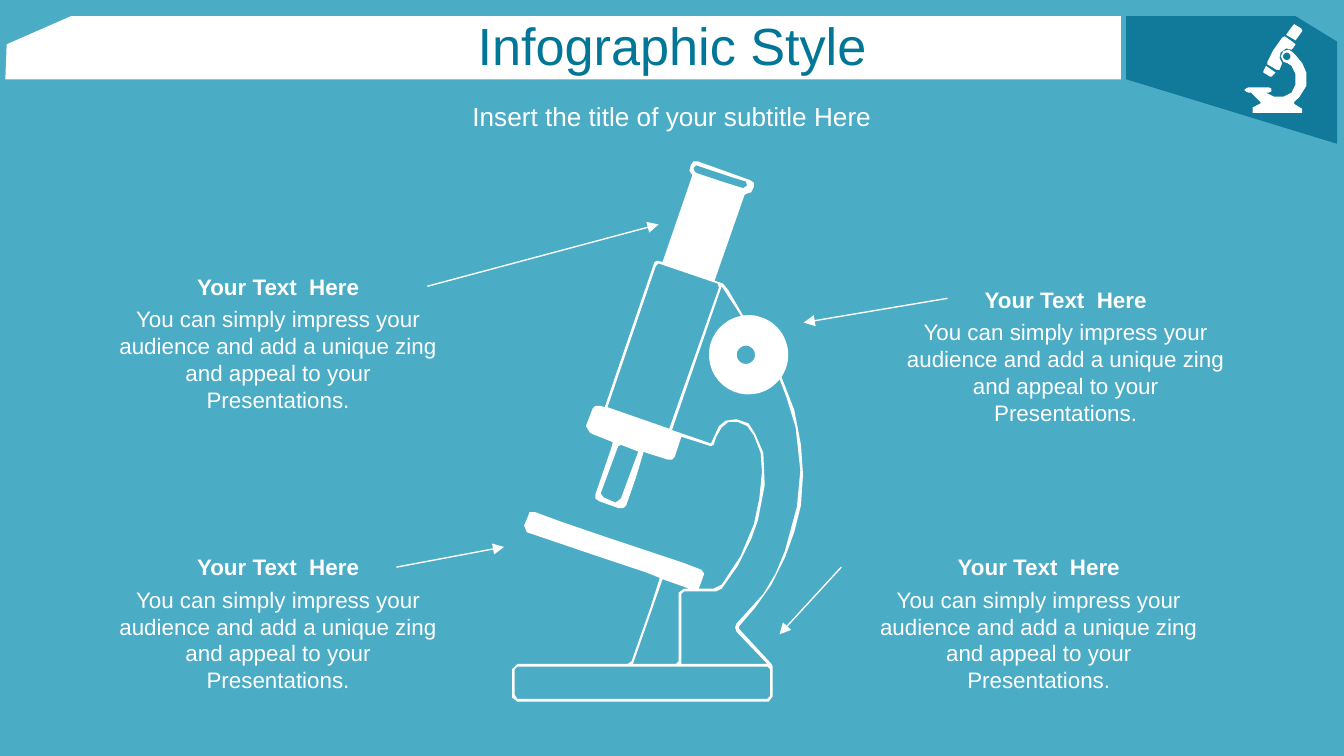
import math

import pptx
import pptx.dml.color
import pptx.enum.shapes
import pptx.enum.text
import pptx.oxml.ns
import pptx.util
from lxml import etree
from pptx.util import Inches

WHITE, SKY, TEAL, TITLE = "FFFFFF", "4BACC6", "117A9A", "027696"
STEPS = 10  # freeform units in a hundredth of an inch
HEADING = "Your Text  Here"
BODY = ("You can simply impress your audience and add a unique zing "
        "and appeal to your Presentations.")


def colour(value):
    return pptx.dml.color.RGBColor.from_string(value)


def arc(center_x, center_y, radius, start, end):
    """Points along a circle, angles in degrees, clockwise from the right."""
    count = 24
    angles = [math.radians(start + (end - start) * i / count) for i in range(count + 1)]
    return [(center_x + radius * math.cos(a), center_y + radius * math.sin(a))
            for a in angles]


def add_outline(shapes, left, top, contours, fill):
    """Fill closed contours given in hundredths of an inch from left, top."""
    scaled = [[(x * STEPS, y * STEPS) for x, y in points] for points in contours]
    builder = shapes.build_freeform(*scaled[0][0], scale=Inches(0.01) / STEPS)
    for index, points in enumerate(scaled):
        if index:
            builder.move_to(*points[0])
        builder.add_line_segments(points[1:], close=True)
    shape = builder.convert_to_shape(Inches(left), Inches(top))
    shape.shadow.inherit = False
    shape.fill.solid()
    shape.fill.fore_color.rgb = colour(fill)
    shape.line.fill.background()


def add_text(page, left, top, width, height, text, size, ink=WHITE, bold=False,
             anchor=pptx.enum.text.MSO_ANCHOR.TOP):
    box = page.shapes.add_textbox(Inches(left), Inches(top), Inches(width), Inches(height))
    frame = box.text_frame
    frame.word_wrap = True
    frame.vertical_anchor = anchor
    para = frame.paragraphs[0]
    para.text = text
    para.alignment = pptx.enum.text.PP_ALIGN.CENTER
    para.font.name = "Arial"
    para.font.size = pptx.util.Pt(size)
    para.font.bold = bold
    para.font.color.rgb = colour(ink)


def add_arrow(page, start, end):
    arrow = page.shapes.add_connector(
        pptx.enum.shapes.MSO_CONNECTOR.STRAIGHT, *map(Inches, start + end))
    arrow.line.color.rgb = colour(WHITE)
    arrow.line.width = pptx.util.Pt(0.75)
    line = arrow.line._get_or_add_ln()
    etree.SubElement(line, pptx.oxml.ns.qn("a:tailEnd"), type="triangle")
    etree.SubElement(arrow._element.spPr, pptx.oxml.ns.qn("a:effectLst"))


def add_header(page, left, top):
    banner = [(1, 21), (49, 0), (830, 0), (830, 47), (0, 47)]
    corner = [(157, 19), (126, 0), (0, 0), (0, 47), (157, 95)]
    add_outline(page.shapes, left, top, [banner], WHITE)
    add_outline(page.shapes, left + 8.34, top, [corner], TEAL)
    add_icon(page, left + 9.22, top + 0.06)
    middle = pptx.enum.text.MSO_ANCHOR.MIDDLE
    add_text(page, 0, 0.02, 10, 0.63, "Infographic Style", 28, TITLE, anchor=middle)
    add_text(page, 0, 0.71, 10, 0.31, "Insert the title of your subtitle Here", 14,
             anchor=middle)


def add_icon(page, left, top):
    stand = [(16, 51), (22, 54), (29, 54), (35, 51), (38, 45), (38, 37), (35, 31),
             (32, 29), (29, 28), (27, 24), (29, 20), (33, 19), (36, 21), (38, 23),
             (43, 29), (46, 36), (46, 46), (41, 54), (37, 58), (37, 59), (38, 60),
             (43, 63), (43, 66), (6, 66), (6, 62), (12, 59), (12, 58), (6, 52),
             (5, 51), (3, 51), (1, 50), (0, 49), (1, 48), (3, 47), (18, 47),
             (20, 48), (20, 50), (18, 51)]
    pivot = arc(31.5, 24, 2.8, 0, 360)
    tube = [(35, 19), (31, 18), (27, 21), (26, 25), (28, 29), (26, 34), (24, 34),
            (19, 31), (17, 30), (17, 28), (21, 20), (28, 10), (30, 9), (37, 14),
            (38, 15), (36, 18)]
    eyepiece = [(38, 12), (31, 8), (33, 5), (36, 1), (37, 0), (42, 3), (43, 5)]
    nose = [(23, 36), (20, 39), (19, 39), (14, 36), (14, 35), (16, 31)]
    group = page.shapes.add_group_shape()
    for contours in ([stand, pivot], [tube], [eyepiece], [nose]):
        add_outline(group.shapes, left, top, contours, WHITE)


def add_microscope(page, left, top):
    wheel = (176, 144, 29.5)
    silhouette = [
        (75, 209), (60, 203), (58, 202), (55, 197), (60, 184), (62, 182), (66, 182),
        (69, 183), (106, 75), (108, 74), (112, 75), (134, 11), (134, 10), (132, 7),
        (133, 3), (135, 0), (138, 0), (177, 14), (180, 16), (180, 19), (178, 23),
        (175, 24), (173, 25), (151, 88), (151, 89), (157, 91), (161, 96),
        *arc(*wheel, -98, 34),
        (210, 185), (215, 211), (216.5, 233), (215, 256), (210, 276), (203, 295),
        (193, 315), (181, 332), (169, 346), (169, 348), (193, 374), (194, 376),
        (194, 398), (191, 402), (4, 402), (0, 399), (0, 378), (4, 374), (86, 374),
        (89, 372), (103, 332), (110, 310), (100, 306), (58, 292), (11, 276), (9, 271),
        (12, 264), (13, 261), (17, 261), (36, 268), (74, 281), (128, 299), (141, 304),
        (143, 307), (139, 318), (150, 318), (156, 315), (170, 294), (180, 270),
        (184, 251), (186, 231), (185, 217), (180, 204), (175, 197), (168, 194),
        (161, 194), (156, 198), (152, 205), (150, 211), (148, 212), (126, 205),
        (121, 220), (119, 222), (116, 222), (100, 217), (98, 216), (92, 236),
        (85, 256), (83, 258), (79, 258), (65, 253), (62, 251), (62, 248), (74, 213)]
    arm = [
        (148, 210), (154, 197), (159, 193), (167, 192), (176, 195), (181, 203),
        (187, 217), (188, 241), (183, 267), (178, 281), (168, 301), (156, 318),
        (152, 320), (128, 320), (126, 322), (126, 374), (190, 374), (189, 373),
        (167, 350), (166, 347), (167, 344), (187, 322), (196, 307), (203, 290),
        (212, 257), (214.5, 230), (211, 198), (204, 175), (199, 162),
        *arc(*wheel, 38, 259), (156, 93), (119, 200)]
    tube = [(71, 183), (117, 199), (154, 94), (153, 91), (109, 76), (107, 78)]
    base = [(4, 376), (190, 376), (192, 378), (192, 398), (190, 400), (4, 400),
            (2, 397), (2, 378)]
    pillar = [(90, 374), (122, 374), (124, 372), (124, 321), (128, 318), (132, 318),
              (112, 311)]
    objective = [(94, 216), (81, 211), (79, 212), (66, 247), (68, 250), (77, 254),
                 (81, 251), (88, 232)]
    eyepiece = [(137, 3), (135, 5), (136, 8), (138, 9), (159, 16), (172, 20),
                (175, 18), (174, 15), (164, 12), (140, 4)]
    knob = arc(174, 144, 6.8, 0, 360)
    add_outline(page.shapes, left, top,
                [silhouette, arm, tube, base, pillar, objective, eyepiece, knob], WHITE)


def add_label(page, left, top):
    add_text(page, left, top + 0.24, 2.64, 0.91, BODY, 12)
    add_text(page, left, top, 2.64, 0.3, HEADING, 12, bold=True)


def main():
    deck = pptx.Presentation()
    deck.slide_width = Inches(10)
    deck.slide_height = deck.slide_width * 9 // 16
    page = deck.slides.add_slide(deck.slide_layouts[6])
    page.background.fill.solid()
    page.background.fill.fore_color.rgb = colour(SKY)
    add_header(page, 0.04, 0.12)
    for left, top in ((0.75, 1.98), (0.75, 4.07), (6.61, 2.08), (6.41, 4.07)):
        add_label(page, left, top)
    add_microscope(page, 3.81, 1.2)
    for start, end in (((7.05, 2.22), (5.98, 2.4)), ((3.18, 2.13), (4.9, 1.67)),
                       ((2.95, 4.22), (3.75, 4.07)), ((6.26, 4.22), (5.8, 4.72))):
        add_arrow(page, start, end)
    deck.save("out.pptx")


if __name__ == "__main__":
    main()
